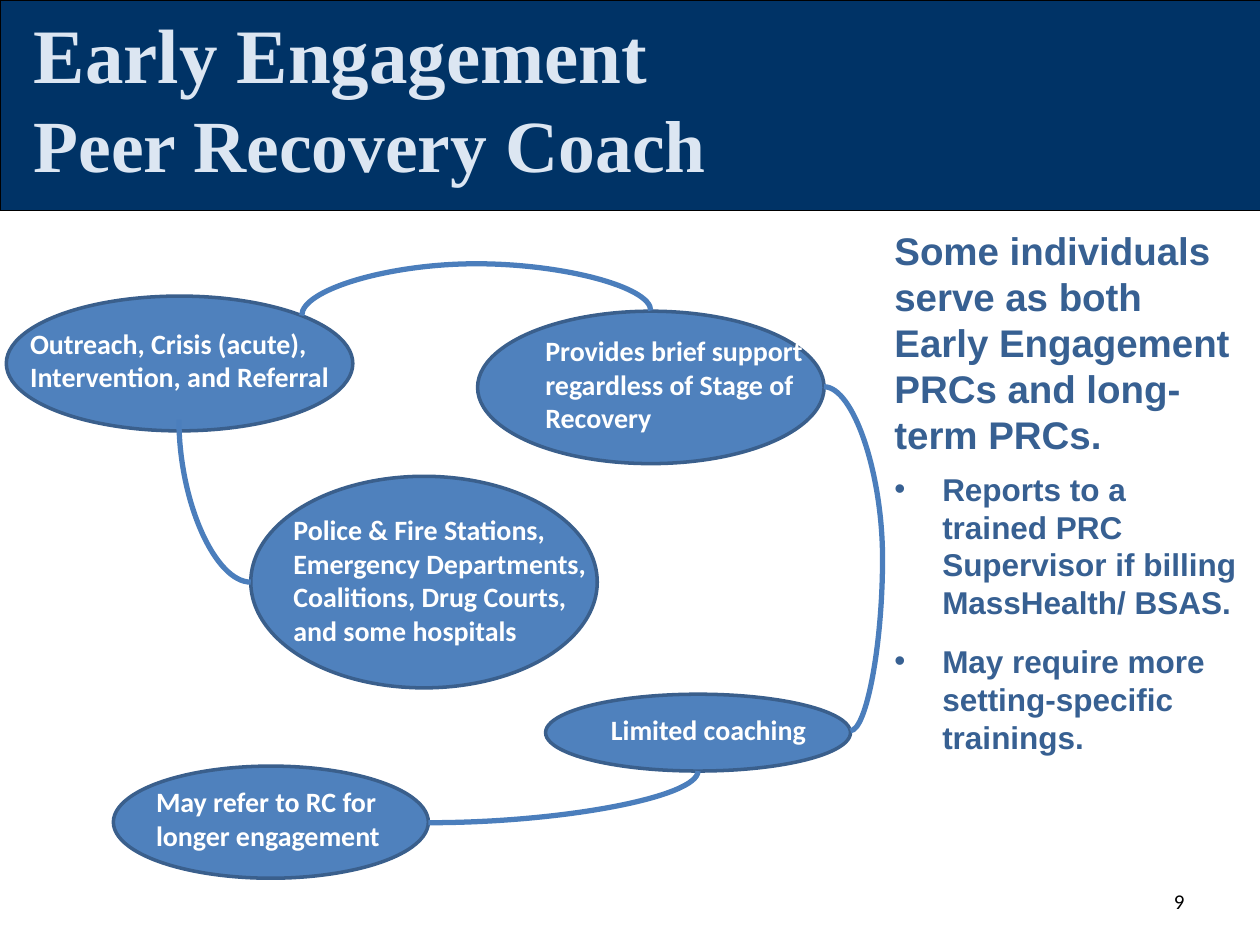
"""Builds the Early Engagement Peer Recovery Coach slide on a grid of 100 columns by 75 rows."""
from lxml.etree import SubElement
from pptx import Presentation
from pptx.dml.color import RGBColor
from pptx.enum.shapes import MSO_CONNECTOR, MSO_SHAPE
from pptx.enum.text import MSO_ANCHOR, PP_ALIGN
from pptx.oxml.ns import qn
from pptx.util import Inches, Pt

COLORS = {name: RGBColor.from_string(value) for name, value in {
    "banner": "003366", "black": "000000", "title": "DCE6F2", "aside": "376092",
    "bubble": "4F81BD", "rim": "3A5F8C", "link": "4B7EBC", "white": "FFFFFF",
}.items()}

deck = Presentation()
deck.slide_width, deck.slide_height = Inches(10), Inches(7.5)
slide = deck.slides.add_slide(deck.slide_layouts[6])
cell = deck.slide_width / 100


def add_outline(preset, area, fill, line, width):
    outline = slide.shapes.add_shape(preset, *(round(n * cell) for n in area))
    outline.shadow.inherit = False
    outline.fill.solid()
    outline.fill.fore_color.rgb = COLORS[fill]
    outline.line.color.rgb = COLORS[line]
    outline.line.width = Pt(width)


def add_text(area, lines, font, color, bold=True):
    frame = slide.shapes.add_textbox(*(round(n * cell) for n in area)).text_frame
    frame.word_wrap = True
    for index, (words, size, gap, bullet) in enumerate(lines):
        paragraph = frame.add_paragraph() if index else frame.paragraphs[0]
        if gap:
            paragraph.space_before = Pt(gap)
        if bullet:
            properties = paragraph._p.get_or_add_pPr()
            properties.set("marL", str(Inches(0.38)))
            properties.set("indent", str(-Inches(0.38)))
            SubElement(properties, qn("a:buFont"), typeface="Arial")
            SubElement(properties, qn("a:buChar"), char="•")
        run = paragraph.add_run()
        run.text = words
        run.font.name, run.font.size, run.font.bold = font, Pt(size), bold
        run.font.color.rgb = COLORS[color]
    return frame


add_outline(MSO_SHAPE.RECTANGLE, (0, 0, 100.2, 16.7), "banner", "black", 0.75)
add_text((70, 17.5, 29.2, 33.7), [
    ("Some individuals serve as both Early Engagement PRCs and long-term PRCs.", 22, 0, False),
    ("Reports to a trained PRC Supervisor if billing MassHealth/ BSAS.", 18, 7, True),
    ("May require more setting-specific trainings.", 18, 12, True),
], "Arial", "aside")
add_text((1.7, 0, 55.8, 15.5), [
    ("Early Engagement", 44, 0, False),
    ("Peer Recovery Coach", 42, 0, False),
], "Times New Roman", "title")

roles = [
    ((19.9, 37.8, 27.5, 16.8), (22.3, 40.2, 25.8, 14.8),
     "Police & Fire Stations, Emergency Departments, Coalitions, Drug Courts, and some hospitals"),
    ((0.5, 23.5, 27.5, 10.7), (1.4, 25.4, 25.8, 9.4),
     "Outreach, Crisis (acute), Intervention, and Referral"),
    ((37.9, 24.7, 27.5, 12.1), (42.3, 26, 22.5, 9.1),
     "Provides brief support regardless of Stage of Recovery"),
    ((43.3, 55.1, 24.2, 6.1), (47.5, 56.1, 19.5, 3.7), "Limited coaching"),
    ((9, 60.8, 25, 8.9), (11.4, 61.8, 22.5, 6.4), "May refer to RC for longer engagement"),
]
for bubble, label, words in roles:
    add_outline(MSO_SHAPE.OVAL, bubble, "bubble", "rim", 2)
    add_text(label, [(words, 16, 0, False)], "Calibri", "white")

links = [
    ((38, 38.7, 37.6, 11), 90, "curvedConnector3", 1024400),
    ((67.5, 58, 65.4, 30.7), 0, "curvedConnector3", -121500),
    ((34, 65.3, 55.4, 61.2), 0, "curvedConnector2", None),
    ((14.2, 33.3, 19.9, 46.2), 180, "curvedConnector2", None),
]
for ends, turn, preset, bend in links:
    link = slide.shapes.add_connector(MSO_CONNECTOR.CURVE, *(round(n * cell) for n in ends))
    link.rotation = turn
    link.line.color.rgb = COLORS["link"]
    link.line.width = Pt(3)
    properties = link._element.spPr
    SubElement(properties, qn("a:effectLst"))
    geometry = properties.find(qn("a:prstGeom"))
    geometry.set("prst", preset)
    if bend is not None:
        SubElement(geometry.find(qn("a:avLst")), qn("a:gd"), name="adj1", fmla=f"val {bend}")

page_number = add_text((71.7, 69.5, 23.3, 4), [("9", 12, 0, False)], "Calibri", "black", bold=False)
page_number.vertical_anchor = MSO_ANCHOR.MIDDLE
page_number.paragraphs[0].alignment = PP_ALIGN.RIGHT

deck.save("out.pptx")
